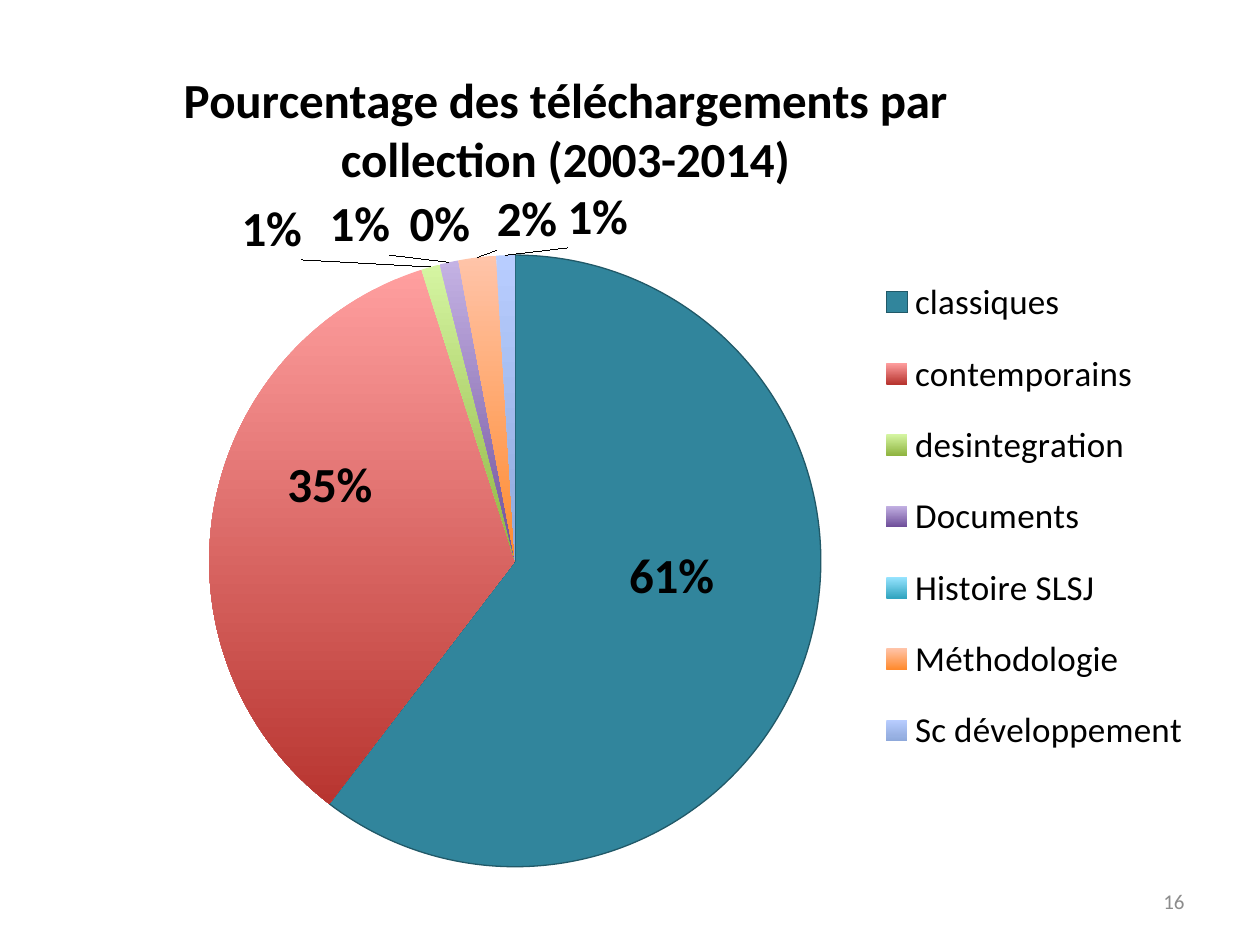
from dataclasses import dataclass

from lxml.etree import SubElement
from pptx import Presentation
from pptx.chart.data import CategoryChartData
from pptx.dml.color import RGBColor
from pptx.enum.chart import XL_CHART_TYPE as ChartType
from pptx.enum.chart import XL_LABEL_POSITION as LabelPos
from pptx.enum.chart import XL_LEGEND_POSITION as LegendPos
from pptx.enum.text import MSO_ANCHOR as Anchor
from pptx.enum.text import PP_ALIGN as Align
from pptx.oxml import parse_xml
from pptx.oxml.ns import nsdecls, qn
from pptx.util import Inches, Pt


@dataclass(frozen=True)
class Theme:
    font: str = "Calibri"
    ink: str = "000000"
    muted: str = "8C8C8C"
    outline: str = "215968"
    heading: int = 28
    legend: int = 20
    footer: int = 12


THEME = Theme()
TITLE = "Pourcentage des téléchargements par collection (2003-2014)"
PAGE = "16"
EMPTY_SHARE = "0%"
INSIDE, OUTSIDE = LabelPos.CENTER, LabelPos.OUTSIDE_END
COLLECTIONS = [
    ("classiques", 61, ["31859C"], INSIDE, (0.01, -0.04)),
    ("contemporains", 35, ["FF9F9F", "B83530"], INSIDE, (-0.03, -0.06)),
    ("desintegration", 1, ["D5F5A2", "8FB440"], OUTSIDE, (-0.11, 0)),
    ("Documents", 1, ["C4B2E4", "6F4F9A"], OUTSIDE, (-0.05, 0)),
    ("Histoire SLSJ", 0, ["97E4FF", "32A5C0"], OUTSIDE, (0.01, 0)),
    ("Méthodologie", 2, ["FFC4A9", "FF8A2E"], OUTSIDE, (0.07, 0)),
    ("Sc développement", 1, ["B8CDFF", "8FA9DB"], OUTSIDE, (0.08, 0)),
]
CHART_BOX = (0.47, 0.46, 9.16, 6.44)
PAGE_BOX = (7.17, 6.95, 2.33, 0.4)
EMPTY_SHARE_BOX = (3.09, 1.48, 0.8, 0.57)
TITLE_AT = {"xMode": "edge", "yMode": "edge", "x": 0.1, "y": -0.01}
PLOT_AT = {"layoutTarget": "inner", "xMode": "edge", "yMode": "edge",
           "x": 0.13, "y": 0.24, "w": 0.53, "h": 0.76}
LEGEND_AT = {"xMode": "edge", "yMode": "edge",
             "x": 0.71, "y": 0.24, "w": 0.27, "h": 0.65}


def style(font, size, color=THEME.ink, bold=False):
    font.name, font.size, font.bold = THEME.font, Pt(size), bold
    font.color.rgb = RGBColor.from_string(color)


def place(parent, after, settings):
    for old in parent.findall(qn("c:layout")):
        parent.remove(old)
    layout = parse_xml(f"<c:layout {nsdecls('c')}/>")
    manual = SubElement(layout, qn("c:manualLayout"))
    for key, value in settings.items():
        SubElement(manual, qn(f"c:{key}")).set("val", str(value))
    if after is None:
        parent.insert(0, layout)
    else:
        after.addnext(layout)


def paint(point, colors):
    fill = point.format.fill
    if len(colors) == 1:
        fill.solid()
        fill.fore_color.rgb = RGBColor.from_string(colors[0])
        point.format.line.color.rgb = RGBColor.from_string(THEME.outline)
        point.format.line.width = Pt(0.75)
        return
    fill.gradient()
    fill.gradient_angle = 270
    for stop, color in zip(fill.gradient_stops, colors):
        stop.color.rgb = RGBColor.from_string(color)
    point.format.line.fill.background()


def add_pie(slide):
    data = CategoryChartData(number_format='0"%"')
    data.categories = [row[0] for row in COLLECTIONS]
    data.add_series("Series 1", [row[1] for row in COLLECTIONS])
    chart = slide.shapes.add_chart(
        ChartType.PIE, *map(Inches, CHART_BOX), data).chart
    style(chart.font, 10)

    chart.has_title = True
    heading = chart.chart_title.text_frame.paragraphs[0].add_run()
    heading.text = TITLE
    style(heading.font, THEME.heading, bold=True)
    title = chart.chart_title._element
    place(title, title.find(qn("c:tx")), TITLE_AT)

    chart.has_legend = True
    chart.legend.position = LegendPos.RIGHT
    chart.legend.include_in_layout = False
    style(chart.legend.font, THEME.legend)
    legend = chart.legend._element
    place(legend, legend.find(qn("c:legendPos")), LEGEND_AT)

    plot = chart.plots[0]
    plot.vary_by_categories = True
    place(plot._element.getparent(), None, PLOT_AT)
    series = plot.series[0]
    labels = series.data_labels
    labels.show_value = True
    labels.number_format, labels.number_format_is_linked = '0"%"', False
    style(labels.font, THEME.heading, bold=True)
    for index, (_, _, colors, position, _) in enumerate(COLLECTIONS):
        point = series.points[index]
        paint(point, colors)
        point.data_label.position = position
        style(point.data_label.font, THEME.heading, bold=True)
    for label, row in zip(series._element.xpath(".//c:dLbl"), COLLECTIONS):
        place(label, label.find(qn("c:idx")), dict(zip("xy", row[4])))
    leader = labels._element.find(qn("c:showLeaderLines"))
    if leader is None:
        leader = SubElement(labels._element, qn("c:showLeaderLines"))
    leader.set("val", "1")


def add_text(slide, box, text, align, size, color=THEME.ink, bold=False):
    frame = slide.shapes.add_textbox(*map(Inches, box)).text_frame
    frame.word_wrap = True
    frame.vertical_anchor = Anchor.MIDDLE
    paragraph = frame.paragraphs[0]
    paragraph.alignment = align
    run = paragraph.add_run()
    run.text = text
    style(run.font, size, color, bold)


def main():
    deck = Presentation()
    deck.slide_width, deck.slide_height = Inches(10), Inches(7.5)
    slide = deck.slides.add_slide(deck.slide_layouts[6])
    add_pie(slide)
    add_text(slide, EMPTY_SHARE_BOX, EMPTY_SHARE, Align.CENTER,
             THEME.heading, bold=True)
    add_text(slide, PAGE_BOX, PAGE, Align.RIGHT, THEME.footer, THEME.muted)
    deck.save("out.pptx")


if __name__ == "__main__":
    main()
